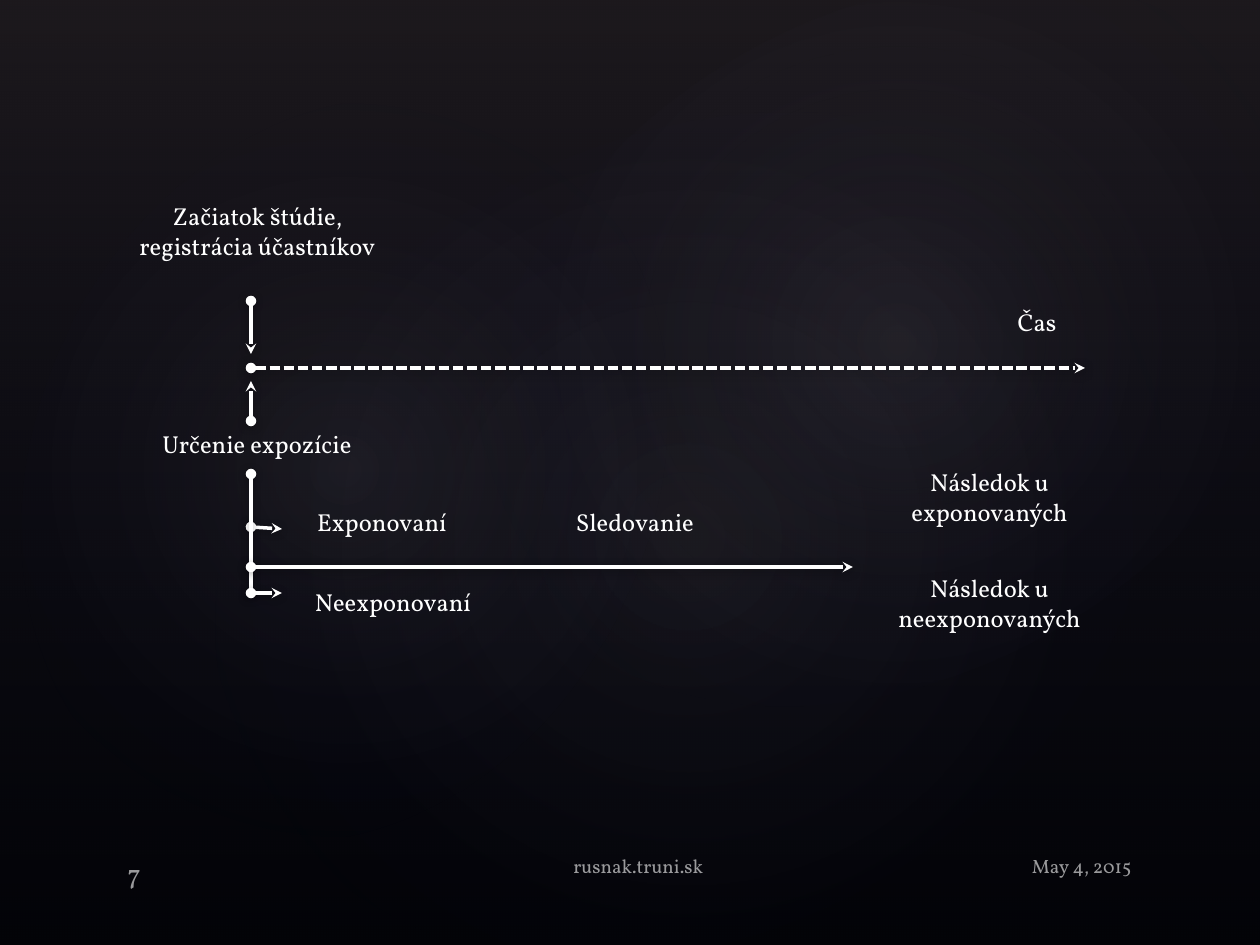
from lxml.etree import SubElement
from pptx import Presentation
from pptx.dml.color import RGBColor
from pptx.enum.dml import MSO_LINE
from pptx.enum.shapes import MSO_CONNECTOR, MSO_SHAPE
from pptx.enum.text import MSO_ANCHOR, PP_ALIGN
from pptx.oxml.ns import qn
from pptx.util import Emu, Pt

EMU_PER_PX = 914400 / 126
WIDTH, HEIGHT = 1260, 945
WHITE = RGBColor(0xFF, 0xFF, 0xFF)
BLACK = RGBColor(0x00, 0x00, 0x00)
BROWN = RGBColor(0x50, 0x46, 0x52)
NAVY = RGBColor(0x24, 0x28, 0x52)
MAUVE = RGBColor(0xC4, 0xBC, 0xC6)


def px(length):
    return Emu(round(length * EMU_PER_PX))


def add_xml(parent, tag, **attributes):
    return SubElement(parent, qn(tag), {k: str(v) for k, v in attributes.items()})


def add_alpha(color_element, percent):
    add_xml(color_element, "a:alpha", val=percent * 1000)


class StudyDiagram:
    font_name = "Vollkorn"
    label_size = 14
    line_width = 2

    def __init__(self, slide):
        self.slide = slide
        background = slide.background.fill
        background.solid()
        background.fore_color.rgb = BLACK

    def glow(self, preset, left, top, width, height, stops, rotation=0, radial=False):
        """Add a translucent gradient; stops are (position %, colour, opacity %)."""
        shape = self.slide.shapes.add_shape(
            preset, px(left), px(top), px(width), px(height))
        shape.rotation = rotation
        shape.shadow.inherit = False
        shape.line.fill.background()
        shape.fill.background()
        properties = shape._element.spPr
        gradient = add_xml(properties, "a:gradFill", rotWithShape=1)
        stop_list = add_xml(gradient, "a:gsLst")
        for position, color, opacity in stops:
            stop = add_xml(stop_list, "a:gs", pos=position * 1000)
            add_alpha(add_xml(stop, "a:srgbClr", val=color), opacity)
        if radial:
            center = add_xml(gradient, "a:path", path="circle")
            add_xml(center, "a:fillToRect", l=50000, t=50000, r=50000, b=50000)
        else:
            add_xml(gradient, "a:lin", ang=90 * 60000, scaled=0)
        properties.replace(properties.find(qn("a:noFill")), gradient)

    def text(self, wording, left, top, width, height, size=label_size,
             align=PP_ALIGN.CENTER, anchor=MSO_ANCHOR.TOP, opacity=100):
        box = self.slide.shapes.add_textbox(px(left), px(top), px(width), px(height))
        frame = box.text_frame
        frame.word_wrap = True
        frame.vertical_anchor = anchor
        if anchor == MSO_ANCHOR.BOTTOM:
            frame.margin_bottom = px(1)
        paragraph = frame.paragraphs[0]
        paragraph.text = wording
        paragraph.alignment = align
        paragraph.font.name = self.font_name
        paragraph.font.size = Pt(size)
        paragraph.font.color.rgb = WHITE
        if opacity < 100:
            for color in paragraph._p.iter(qn("a:srgbClr")):
                add_alpha(color, opacity)

    def arrow(self, x1, y1, x2, y2, dashed=False, pointed=True):
        line = self.slide.shapes.add_connector(
            MSO_CONNECTOR.STRAIGHT, px(x1), px(y1), px(x2), px(y2))
        line.line.color.rgb = WHITE
        line.line.width = Pt(self.line_width)
        if dashed:
            line.line.dash_style = MSO_LINE.SQUARE_DOT
        properties = line._element.spPr
        outline = properties.find(qn("a:ln"))
        add_xml(outline, "a:headEnd", type="oval")
        if pointed:
            add_xml(outline, "a:tailEnd", type="stealth")
        effects = add_xml(properties, "a:effectLst")
        shadow = add_xml(effects, "a:outerShdw", blurRad=Pt(5), dist=Pt(1),
                         dir=90 * 60000, rotWithShape=0)
        add_alpha(add_xml(shadow, "a:srgbClr", val=BLACK), 32)


def main():
    presentation = Presentation()
    presentation.slide_width, presentation.slide_height = px(WIDTH), px(HEIGHT)
    diagram = StudyDiagram(presentation.slides.add_slide(presentation.slide_layouts[6]))

    diagram.glow(MSO_SHAPE.RECTANGLE, 0, 0, WIDTH, HEIGHT,
                 [(0, BROWN, 36), (100, NAVY, 10)])
    for left, top, width, height, rotation, opacity in (
        (189, 144, 998, 786, 328.7, 7),
        (-38, 161, 764, 617, 294.3, 8),
        (451, 16, 893, 655, 328.7, 8),
    ):
        diagram.glow(MSO_SHAPE.OVAL, left, top, width, height,
                     [(0, MAUVE, opacity), (58, NAVY, 0)], rotation, radial=True)

    diagram.text("May 4, 2015", 850, 848, 294, 50, 11, PP_ALIGN.RIGHT, opacity=60)
    diagram.text("7", 115, 849, 118, 42, 16, PP_ALIGN.LEFT, MSO_ANCHOR.BOTTOM, 60)
    diagram.text("rusnak.truni.sk", 561, 848, 183, 50, 11, PP_ALIGN.LEFT, opacity=60)

    start_x, branch_x = 251, 282
    time_y, exposed_y, unexposed_y, follow_up_y = 368, 527, 593, 567
    diagram.arrow(start_x, time_y, 1085, time_y, dashed=True)
    diagram.arrow(start_x, 301, start_x, 354)
    diagram.arrow(start_x, 421, start_x, 381)
    diagram.arrow(start_x, exposed_y, branch_x, exposed_y + 2)
    diagram.arrow(start_x, 474, start_x, unexposed_y, pointed=False)
    diagram.arrow(start_x, unexposed_y, branch_x, unexposed_y)
    diagram.arrow(start_x, follow_up_y, 853, follow_up_y)

    for label in (
        ("Určenie expozície", 123, 423, 268, 43),
        ("Začiatok štúdie, registrácia účastníkov", 115, 195, 285, 97),
        ("Exponovaní", 282, 501, 200, 57),
        ("Neexponovaní", 293, 581, 200, 57),
        ("Čas", 979, 301, 116, 57),
        ("Sledovanie", 535, 501, 200, 57),
        ("Následok u exponovaných", 885, 461, 209, 97),
        ("Následok u neexponovaných", 863, 567, 253, 97),
    ):
        diagram.text(*label)

    presentation.save("out.pptx")


if __name__ == "__main__":
    main()
